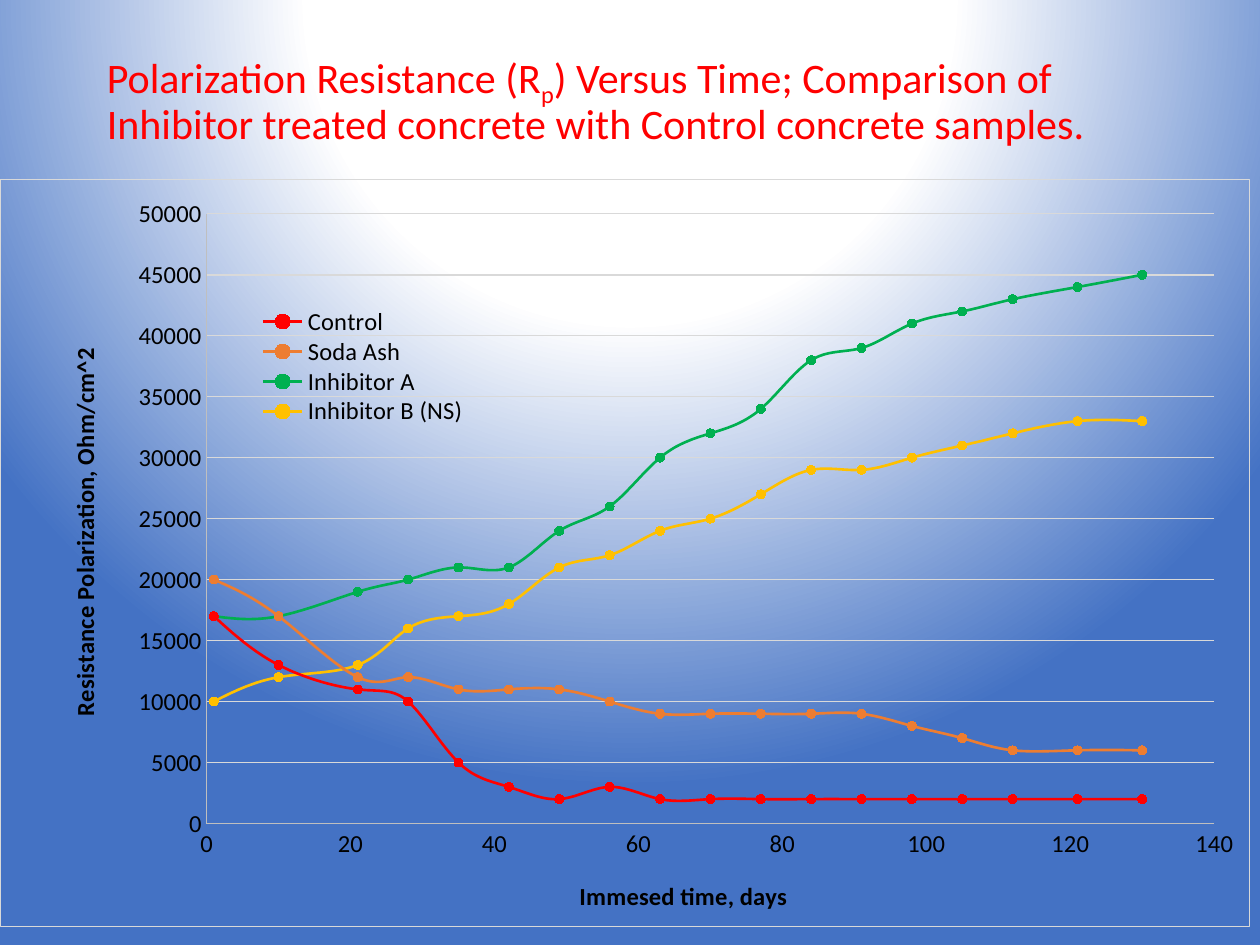
from lxml import etree
from pptx import Presentation
from pptx.chart.data import XyChartData
from pptx.dml.color import RGBColor
from pptx.enum.chart import XL_CHART_TYPE as CT, XL_LEGEND_POSITION as LP
from pptx.enum.chart import XL_MARKER_STYLE as MS, XL_TICK_MARK as TM
from pptx.enum.text import MSO_ANCHOR
from pptx.oxml import parse_xml
from pptx.oxml.ns import nsdecls, qn
from pptx.util import Inches, Pt

FONT = "Calibri"
TITLE = [
    ("Polarization Resistance (R", 0),
    ("p", -25000),
    (") Versus Time; Comparison of Inhibitor treated concrete with Control concrete samples.", 0),
]
DAYS = [1, 10, 21, 28, 35, 42, 49, 56, 63, 70, 77, 84, 91, 98, 105, 112, 121, 130]
THOUSANDS = [
    ("Control", "FF0000", [17, 13, 11, 10, 5, 3, 2, 3, 2, 2, 2, 2, 2, 2, 2, 2, 2, 2]),
    ("Soda Ash", "ED7D31", [20, 17, 12, 12, 11, 11, 11, 10, 9, 9, 9, 9, 9, 8, 7, 6, 6, 6]),
    ("Inhibitor A", "00B050",
     [17, 17, 19, 20, 21, 21, 24, 26, 30, 32, 34, 38, 39, 41, 42, 43, 44, 45]),
    ("Inhibitor B (NS)", "FFC000",
     [10, 12, 13, 16, 17, 18, 21, 22, 24, 25, 27, 29, 29, 30, 31, 32, 33, 33]),
]
GRADIENT = [(0, "FFFFFF"), (41, "FFFFFF"), (100, "4472C4")]


def rgb(color):
    return RGBColor.from_string(color)


def set_line(line, color, width):
    line.color.rgb = rgb(color)
    line.width = Pt(width)


def set_font(font, size, color, bold=False):
    font.name, font.size, font.bold = FONT, Pt(size), bold
    font.color.rgb = rgb(color)


def set_background(s):
    s.background.fill.solid()
    solid = s.element.xpath(".//p:bgPr/a:solidFill")[0]
    stops = "".join(f'<a:gs pos="{pos * 1000}"><a:srgbClr val="{color}"/></a:gs>'
                    for pos, color in GRADIENT)
    solid.getparent().replace(solid, parse_xml(
        f'<a:gradFill {nsdecls("a")} rotWithShape="1"><a:gsLst>{stops}</a:gsLst>'
        '<a:path path="circle"><a:fillToRect l="50000" t="-80000" r="50000" b="180000"/>'
        '</a:path></a:gradFill>'))


def place(element, index, x, y, w=None, h=None, inner=False):
    for old in element.findall(qn("c:layout")):
        element.remove(old)
    layout = parse_xml(f'<c:layout {nsdecls("c")}><c:manualLayout/></c:layout>')
    values = [("layoutTarget", "inner")] if inner else []
    values += [("xMode", "edge"), ("yMode", "edge"), ("x", x), ("y", y)]
    values += [("w", w), ("h", h)] if w else []
    for name, value in values:
        etree.SubElement(layout[0], qn(f"c:{name}")).set("val", str(value))
    element.insert(index, layout)


def add_title(s):
    box = s.shapes.add_textbox(Inches(0.75), Inches(0.17), Inches(8.5), Inches(1.25))
    tf = box.text_frame
    tf.word_wrap = True
    tf.vertical_anchor = MSO_ANCHOR.MIDDLE
    p = tf.paragraphs[0]
    p.line_spacing = 0.9
    for text, baseline in TITLE:
        r = p.add_run()
        r.text = text
        set_font(r.font, 24, "FF0000")
        if baseline:
            r.font._element.set("baseline", str(baseline))


def style_axis(axis, title, maximum, step, x, y):
    axis.minimum_scale, axis.maximum_scale, axis.major_unit = 0, maximum, step
    axis.major_tick_mark = axis.minor_tick_mark = TM.NONE
    axis.has_major_gridlines = False
    set_line(axis.format.line, "BFBFBF", 0.75)
    tf = axis.axis_title.text_frame
    tf.text = title
    set_font(tf.paragraphs[0].runs[0].font, 14, "000000", True)
    place(axis.axis_title._element, 1, x, y)


def add_resistance_chart(s):
    data = XyChartData()
    for name, _, values in THOUSANDS:
        series = data.add_series(name)
        for day, value in zip(DAYS, values):
            series.add_data_point(day, value * 1000)
    chart = s.shapes.add_chart(CT.XY_SCATTER_SMOOTH, Inches(0), Inches(1.42),
                               Inches(9.92), Inches(5.94), data).chart
    chart.has_title = False
    set_font(chart.font, 14, "000000")
    plot = chart.plots[0]
    plot.vary_by_categories = False
    for series, (_, color, _) in zip(plot.series, THOUSANDS):
        set_line(series.format.line, color, 1.5)
        series._element.find(qn("c:smooth")).set("val", "1")
        marker = series.marker
        marker.style, marker.size = MS.CIRCLE, 5
        marker.format.fill.solid()
        marker.format.fill.fore_color.rgb = rgb(color)
        set_line(marker.format.line, color, 0.75)

    style_axis(chart.category_axis, "Immesed time, days", 140, 20, 0.46, 0.93)
    style_axis(chart.value_axis, "Resistance Polarization, Ohm/cm^2", 50000, 5000, 0.05, 0.22)
    chart.value_axis.has_major_gridlines = True
    set_line(chart.value_axis.major_gridlines.format.line, "D9D9D9", 0.75)

    chart.has_legend = True
    chart.legend.position = LP.RIGHT
    chart.legend.include_in_layout = False
    place(chart.legend._element, 1, 0.2, 0.17, 0.18, 0.16)
    space = chart._chartSpace
    place(space.chart.plotArea, 0, 0.165, 0.046, 0.807, 0.816, True)
    space.chart.addnext(parse_xml(
        f'<c:spPr {nsdecls("c", "a")}><a:noFill/><a:ln w="{Pt(0.75)}"><a:solidFill>'
        '<a:srgbClr val="D9D9D9"/></a:solidFill></a:ln></c:spPr>'))


def main():
    prs = Presentation()
    prs.slide_width, prs.slide_height = Inches(10), Inches(7.5)
    s = prs.slides.add_slide(prs.slide_layouts[6])
    set_background(s)
    add_title(s)
    add_resistance_chart(s)
    prs.save("out.pptx")


if __name__ == "__main__":
    main()
